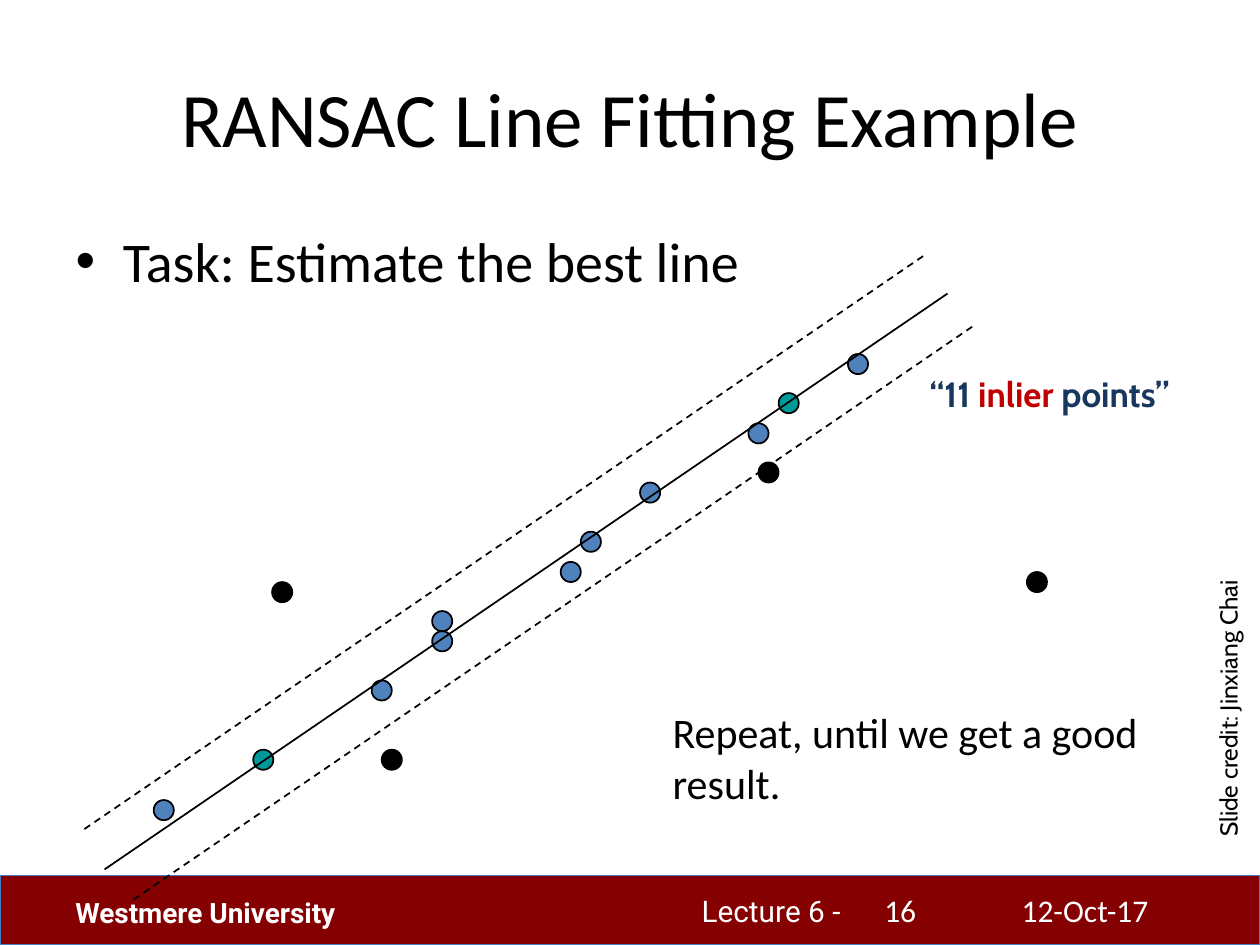
import pptx
import pptx.util
import pptx.dml.color
import pptx.enum.dml
import pptx.enum.shapes
import pptx.enum.text
import pptx.oxml.ns
import lxml.etree

Inches, Pt = pptx.util.Inches, pptx.util.Pt
RGB = pptx.dml.color.RGBColor
BLACK, WHITE = RGB(0, 0, 0), RGB(0xFF, 0xFF, 0xFF)
MAROON, BAR_EDGE = RGB(0x85, 0, 0), RGB(0x4B, 0x7E, 0xBC)
BLUE, TEAL = RGB(0x4F, 0x81, 0xBD), RGB(0, 0x99, 0x99)
NAVY, RED = RGB(0x17, 0x37, 0x5E), RGB(0xC0, 0, 0)

# Content
TITLE = "RANSAC Line Fitting Example"
TASK = "Task: Estimate the best line"
REPEAT = "Repeat, until we get a good result."
INLIER_COUNT = [("“11 ", NAVY), ("inlier", RED), (" points”", NAVY)]
CREDIT = "Slide credit: Jinxiang Chai"
FOOTER = [  # text, box, format
    ("Lecture 6 -", (5.47, 7.04, 2.44, 0.4), dict(size=17, font="Roboto")),
    ("Westmere University", (0.5, 7.06, 2.67, 0.37),
     dict(size=16, font="Roboto", bold=True)),
    ("12-Oct-17", (8.01, 7.02, 1.74, 0.4), dict(size=18)),
    ("16", (6.92, 7.02, 1.1, 0.4), dict(size=18)),
]

# Left and top of each data point, by role
DOT = 0.16
POINTS = [
    (BLACK, [(6.02, 3.67), (2.16, 4.62), (3.03, 5.95), (8.15, 4.54)]),
    (BLUE, [(4.45, 4.46), (3.43, 5.01), (5.08, 3.83), (5.94, 3.36), (4.61, 4.22),
            (1.22, 6.35), (6.73, 2.81), (2.95, 5.4), (3.43, 4.85)]),
    (TEAL, [(6.18, 3.12), (2.01, 5.95)]),
]
# The fitted line and its two margins share one direction
RUN, RISE = 6.69, 4.57
LINE_STARTS = [(0.83, 6.9, False), (1.06, 7.14, True), (0.67, 6.58, True)]

prs = pptx.Presentation()
prs.slide_width, prs.slide_height = Inches(10), Inches(7.5)
slide = prs.slides.add_slide(prs.slide_layouts[1])


def place(shape, box):
    shape.left, shape.top, shape.width, shape.height = map(Inches, box)


def write(frame, text, size=18, font="Calibri", color=BLACK, bold=False, before=None):
    """Fill a text frame with one paragraph; text is a string or (text, color) runs."""
    frame.word_wrap = True
    paragraph = frame.paragraphs[0]
    if before is not None:
        paragraph.space_before = Pt(before)
    for words, tint in [(text, color)] if isinstance(text, str) else text:
        run = paragraph.add_run()
        run.text = words
        run.font.size, run.font.name, run.font.bold = Pt(size), font, bold
        run.font.color.rgb = tint


def add_text(text, box, **style):
    label = slide.shapes.add_textbox(*map(Inches, box))
    write(label.text_frame, text, **style)
    return label


def add_filled(kind, box, fill, edge, width):
    shape = slide.shapes.add_shape(kind, *map(Inches, box))
    shape.shadow.inherit = False
    shape.fill.solid()
    shape.fill.fore_color.rgb = fill
    shape.line.color.rgb, shape.line.width = edge, Pt(width)


def add_line(x, y, dashed):
    line = slide.shapes.add_connector(
        pptx.enum.shapes.MSO_CONNECTOR.STRAIGHT,
        *map(Inches, (x, y, x + RUN, y - RISE)))
    line.line.color.rgb, line.line.width = BLACK, Pt(1)
    if dashed:
        line.line.dash_style = pptx.enum.dml.MSO_LINE.DASH
    lxml.etree.SubElement(line._element.spPr, pptx.oxml.ns.qn("a:effectLst"))


# Footer bar
SHAPES = pptx.enum.shapes.MSO_SHAPE
add_filled(SHAPES.RECTANGLE, (0, 6.95, 10, 0.55), MAROON, BAR_EDGE, 0.75)
for text, box, style in FOOTER:
    add_text(text, box, color=WHITE, **style)

# Title and task
title, task = slide.shapes.title, slide.placeholders[1]
place(title, (0.5, 0.3, 9, 1.25))
place(task, (0.5, 1.75, 9, 4.95))
title.text_frame.vertical_anchor = pptx.enum.text.MSO_ANCHOR.MIDDLE
write(title.text_frame, TITLE, size=44)
write(task.text_frame, TASK, size=32)

# Data points, then the fitted line with its margins
for color, corners in POINTS:
    for x, y in corners:
        add_filled(SHAPES.OVAL, (x, y, DOT, DOT), color, BLACK, 1)
for start in LINE_STARTS:
    add_line(*start)

# Annotations
add_text(REPEAT, (5.24, 5.56, 4.25, 1.18), size=24, before=4.8)
add_text(INLIER_COUNT, (7.28, 2.91, 2.53, 0.44), size=20, font="Cabin", bold=True)
credit = add_text(CREDIT, (8.5, 5.32, 2.5, 0.34), size=14, font="Cabin")
credit.rotation = 270

prs.save("out.pptx")
